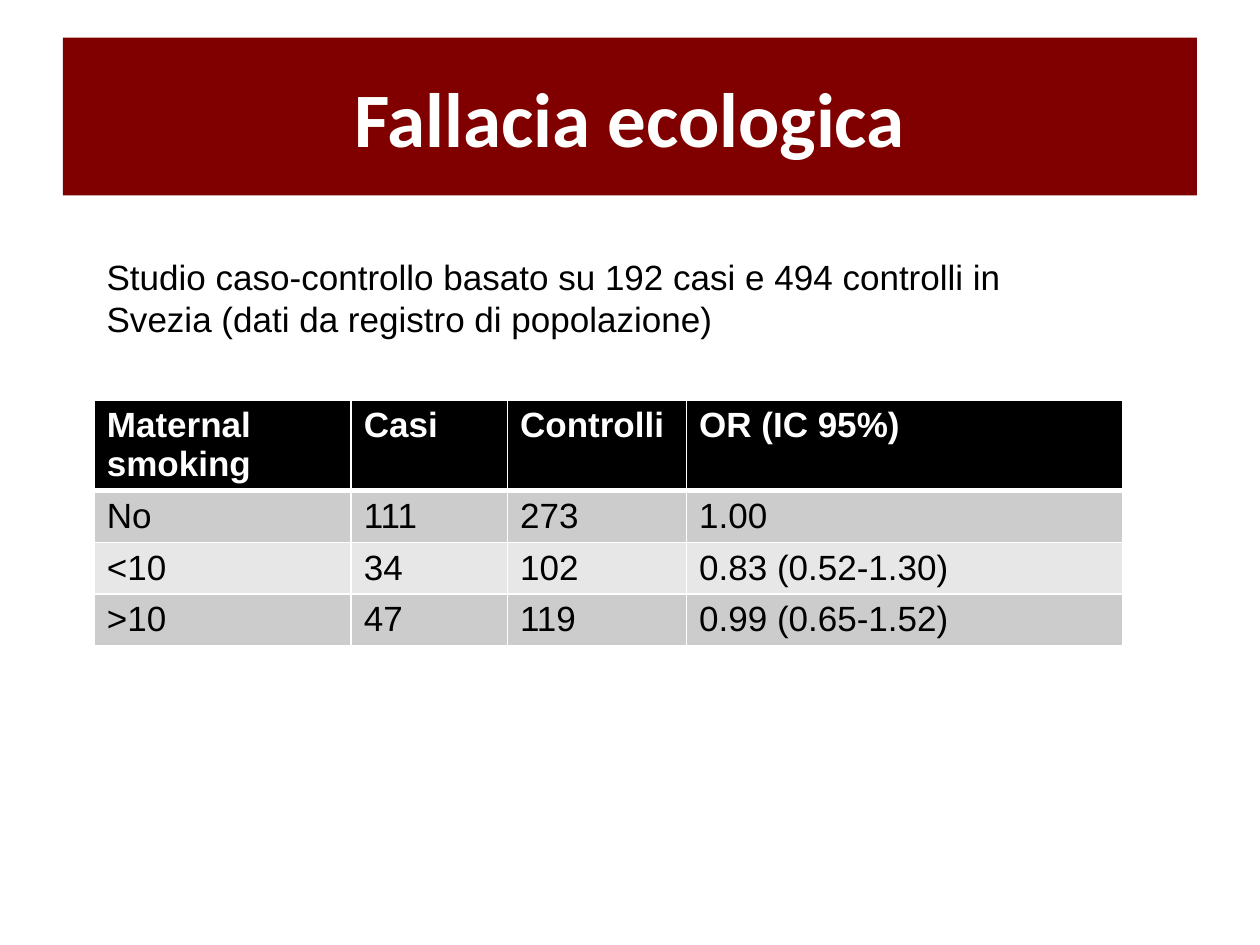
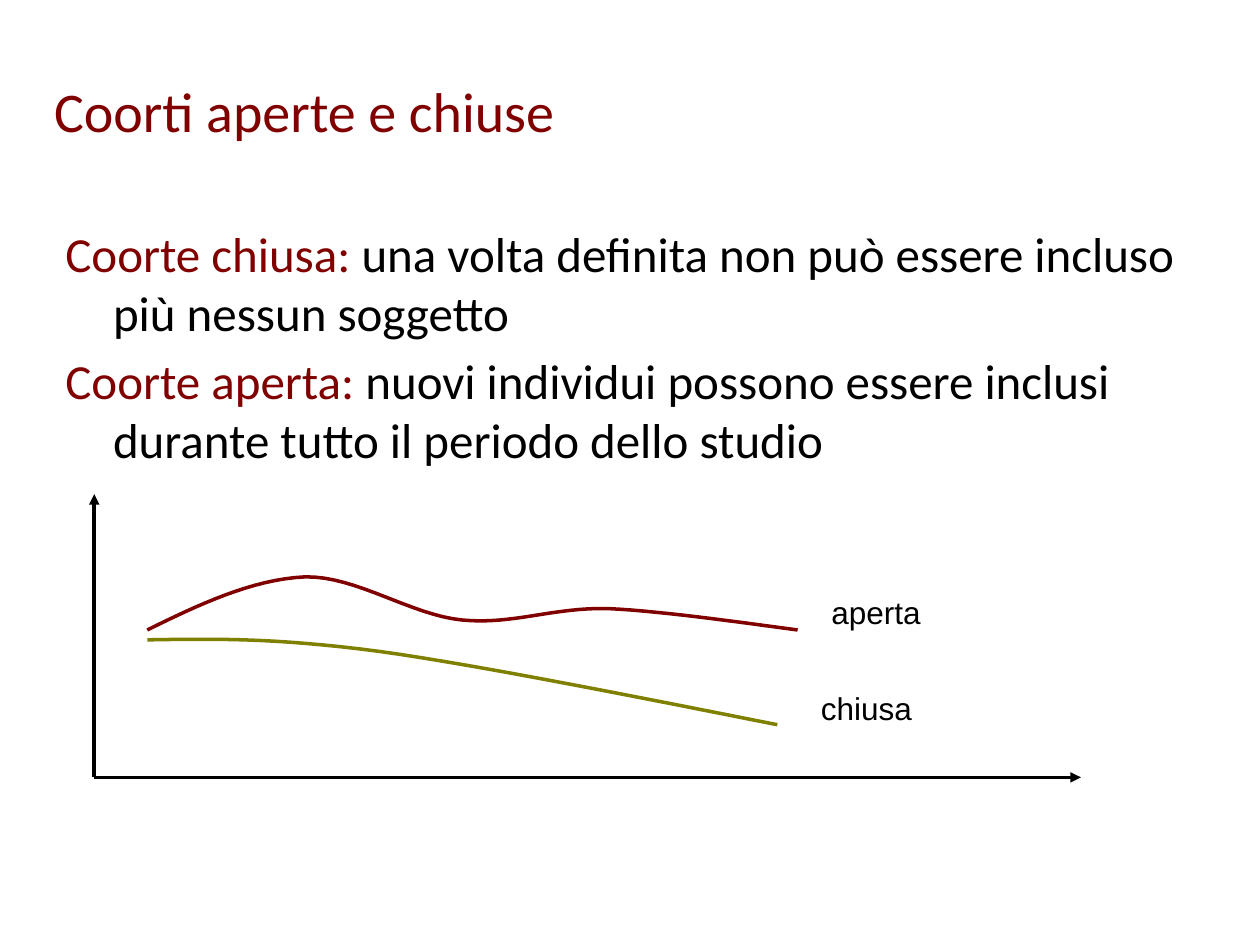
"""Build two lecture slides on the ecological fallacy and on cohorts."""
from dataclasses import dataclass

from lxml.etree import SubElement as Sub
from pptx import Presentation
from pptx.dml.color import RGBColor as RGB
from pptx.enum.shapes import MSO_CONNECTOR as Link, MSO_SHAPE as Form
from pptx.enum.text import MSO_ANCHOR as Anchor, PP_ALIGN as Align
from pptx.oxml.ns import qn
from pptx.util import Cm, Pt

RED = RGB(0x80, 0x00, 0x00)
OLIVE = RGB(0x80, 0x80, 0x00)
BLACK = RGB(0x00, 0x00, 0x00)
WHITE = RGB(0xFF, 0xFF, 0xFF)
GREY = RGB(0xCC, 0xCC, 0xCC)
PALE = RGB(0xE7, 0xE7, 0xE7)
STEPS = 16

Point = tuple[float, float]


@dataclass(frozen=True)
class Box:
    """A place on the slide, in centimetres."""
    left: float
    top: float
    width: float
    height: float

    def place(self) -> list[Cm]:
        """Return the four lengths."""
        return [Cm(v) for v in (self.left, self.top, self.width, self.height)]


@dataclass(frozen=True)
class Style:
    """The look of a text."""
    font: str
    size: int
    color: RGB
    bold: bool = False


@dataclass(frozen=True)
class Curve:
    """A cohort line: start point, Bezier bends, and its label."""
    name: str
    color: RGB
    start: Point
    bends: tuple[tuple[Point, Point, Point], ...]
    label: Box


BAND = Style("Calibri", 44, WHITE, True)
TITLE = Style("Calibri", 32, RED)
TERM = Style("Calibri", 28, RED)
BODY = Style("Calibri", 28, BLACK)
NOTE = Style("Arial", 20, BLACK)
HEAD = Style("Arial", 20, WHITE, True)
LABEL = Style("Arial", 18, BLACK)

ROWS = (
    ("Maternal smoking", "Casi", "Controlli", "OR (IC 95%)"),
    ("No", "111", "273", "1.00"),
    ("<10", "34", "102", "0.83 (0.52-1.30)"),
    (">10", "47", "119", "0.99 (0.65-1.52)"),
)
WIDTHS = (5.18, 3.15, 3.61, 8.79)
HEAD_H, ROW_H = 1.81, 1.04

TERMS = (
    ("Coorte chiusa: ", "una volta definita non può essere incluso più nessun soggetto"),
    ("Coorte aperta: ", "nuovi individui possono essere inclusi durante tutto il periodo dello studio"),
)
ORIGIN = (1.9, 15.67)
TIPS = ((1.9, 9.96), (21.79, 15.67))
CURVES = (
    Curve("aperta", RED, (2.97, 12.7), (
        ((4.01, 12.19), (5.08, 11.68), (6.15, 11.63)),
        ((7.19, 11.61), (8.28, 12.4), (9.32, 12.5)),
        ((10.34, 12.6), (11.15, 12.24), (12.27, 12.27)),
        ((13.41, 12.32), (15.44, 12.62), (16.08, 12.7)),
    ), Box(16.51, 11.84, 6.35, 1.02)),
    Curve("chiusa", OLIVE, (2.97, 12.9), (
        ((4.24, 12.88), (5.51, 12.85), (7.62, 13.13)),
        ((9.73, 13.41), (14.33, 14.35), (15.67, 14.61)),
    ), Box(16.3, 13.77, 6.35, 1.02)),
)


def paint(run, style: Style) -> None:
    """Give a run its font, size, weight and colour."""
    font = run.font
    font.name, font.size, font.bold = style.font, Pt(style.size), style.bold
    font.color.rgb = style.color


def write(frame, text: str, style: Style, anchor=Anchor.TOP, align=Align.LEFT) -> None:
    """Fill a text frame with one styled paragraph."""
    frame.word_wrap = True
    frame.text = text
    frame.vertical_anchor = anchor
    line = frame.paragraphs[0]
    line.alignment = align
    paint(line.runs[0], style)


def add_text(slide, box: Box, text: str, style: Style, anchor=Anchor.TOP) -> None:
    """Add a text box with one paragraph."""
    write(slide.shapes.add_textbox(*box.place()).text_frame, text, style, anchor)


def add_band(slide, box: Box, text: str) -> None:
    """Add a filled title band."""
    band = slide.shapes.add_shape(Form.RECTANGLE, *box.place())
    band.shadow.inherit = False
    band.fill.solid()
    band.fill.fore_color.rgb = RED
    band.line.fill.background()
    write(band.text_frame, text, BAND, Anchor.MIDDLE, Align.CENTER)


def edge(cell, side: str, width: float) -> None:
    """Draw one white border of a cell."""
    line = Sub(cell._tc.get_or_add_tcPr(), qn(f"a:ln{side}"), w=str(Pt(width)))
    Sub(Sub(line, qn("a:solidFill")), qn("a:srgbClr"), val=str(WHITE))


def add_grid(slide, left: float, top: float) -> None:
    """Add the table of cases and controls."""
    box = Box(left, top, sum(WIDTHS), HEAD_H + ROW_H * (len(ROWS) - 1))
    table = slide.shapes.add_table(len(ROWS), len(WIDTHS), *box.place()).table
    for col, width in zip(table.columns, WIDTHS):
        col.width = Cm(width)
    for r, row in enumerate(ROWS):
        table.rows[r].height = Cm(ROW_H if r else HEAD_H)
        fill = (GREY if r % 2 else PALE) if r else BLACK
        for c, text in enumerate(row):
            cell = table.cell(r, c)
            write(cell.text_frame, text, NOTE if r else HEAD)
            for side in "LRTB":
                thick = (r, side) in ((0, "B"), (1, "T"))
                edge(cell, side, 3 if thick else 1)
            cell.fill.solid()
            cell.fill.fore_color.rgb = fill


def add_terms(slide, box: Box) -> None:
    """Add the definitions with a hanging indent."""
    frame = slide.shapes.add_textbox(*box.place()).text_frame
    frame.word_wrap = True
    for i, pair in enumerate(TERMS):
        line = frame.add_paragraph() if i else frame.paragraphs[0]
        line.space_after = Pt(5)
        props = line._p.get_or_add_pPr()
        props.set("marL", str(Cm(0.96)))
        props.set("indent", str(-Cm(0.96)))
        for text, style in zip(pair, (TERM, BODY)):
            run = line.add_run()
            run.text = text
            paint(run, style)


def add_axis(slide, start: Point, end: Point) -> None:
    """Add an arrow from start to end."""
    axis = slide.shapes.add_connector(Link.STRAIGHT, *map(Cm, start + end))
    axis.line.color.rgb = BLACK
    axis.line.width = Pt(2)
    props = axis._element.spPr
    Sub(props.find(qn("a:ln")), qn("a:tailEnd"), type="triangle")
    Sub(props, qn("a:effectLst"))


def trace(curve: Curve) -> list[tuple[Cm, Cm]]:
    """Sample the Bezier bends of a curve."""
    dots, a = [], curve.start
    for b, c, d in curve.bends:
        for step in range(1, STEPS + 1):
            t = step / STEPS
            u = 1 - t
            mix = (u ** 3, 3 * u * u * t, 3 * u * t * t, t ** 3)
            dots.append(tuple(Cm(sum(m * v for m, v in zip(mix, axis)))
                              for axis in zip(a, b, c, d)))
        a = d
    return dots


def add_curve(slide, curve: Curve) -> None:
    """Add a cohort curve and its label."""
    pen = slide.shapes.build_freeform(*map(Cm, curve.start))
    pen.add_line_segments(trace(curve), close=False)
    shape = pen.convert_to_shape()
    shape.shadow.inherit = False
    shape.fill.background()
    shape.line.color.rgb = curve.color
    shape.line.width = Pt(2)
    add_text(slide, curve.label, curve.name, LABEL)


def main() -> None:
    """Build and save both slides."""
    deck = Presentation()
    deck.slide_width, deck.slide_height = Cm(25.4), Cm(19.05)
    blank = deck.slide_layouts[6]

    study = deck.slides.add_slide(blank)
    add_grid(study, 1.9, 8.06)
    add_band(study, Box(1.27, 0.76, 22.86, 3.18), "Fallacia ecologica")
    add_text(study, Box(1.9, 5.03, 19.69, 1.96),
             "Studio caso-controllo basato su 192 casi e 494 controlli in "
             "Svezia (dati da registro di popolazione)", NOTE)

    cohort = deck.slides.add_slide(blank)
    add_text(cohort, Box(0.84, 0.64, 22.86, 3.18),
             "Coorti aperte e chiuse", TITLE, Anchor.MIDDLE)
    add_terms(cohort, Box(1.07, 4.39, 22.86, 12.57))
    for tip in TIPS:
        add_axis(cohort, ORIGIN, tip)
    for curve in CURVES:
        add_curve(cohort, curve)

    deck.save("out.pptx")


if __name__ == "__main__":
    main()
